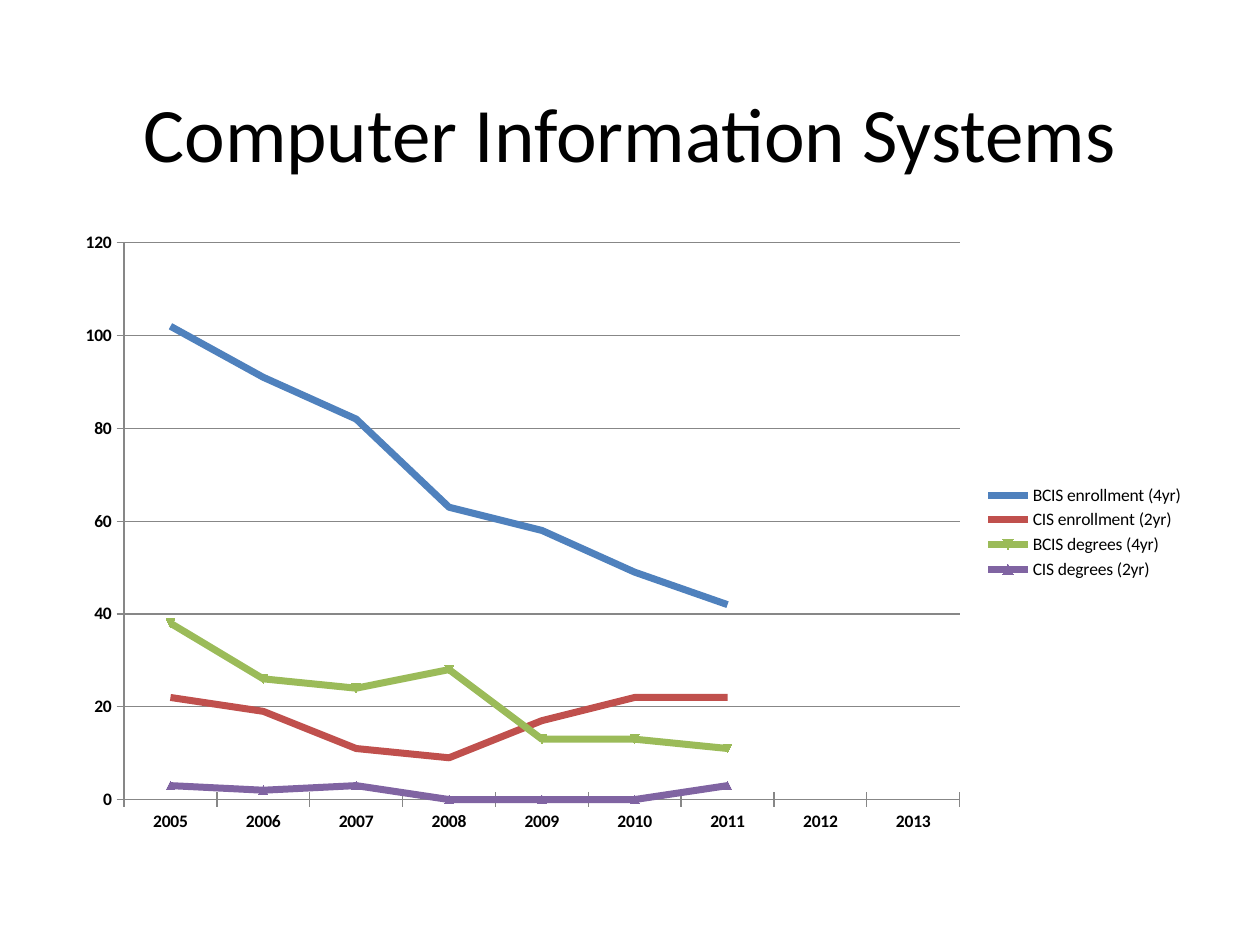
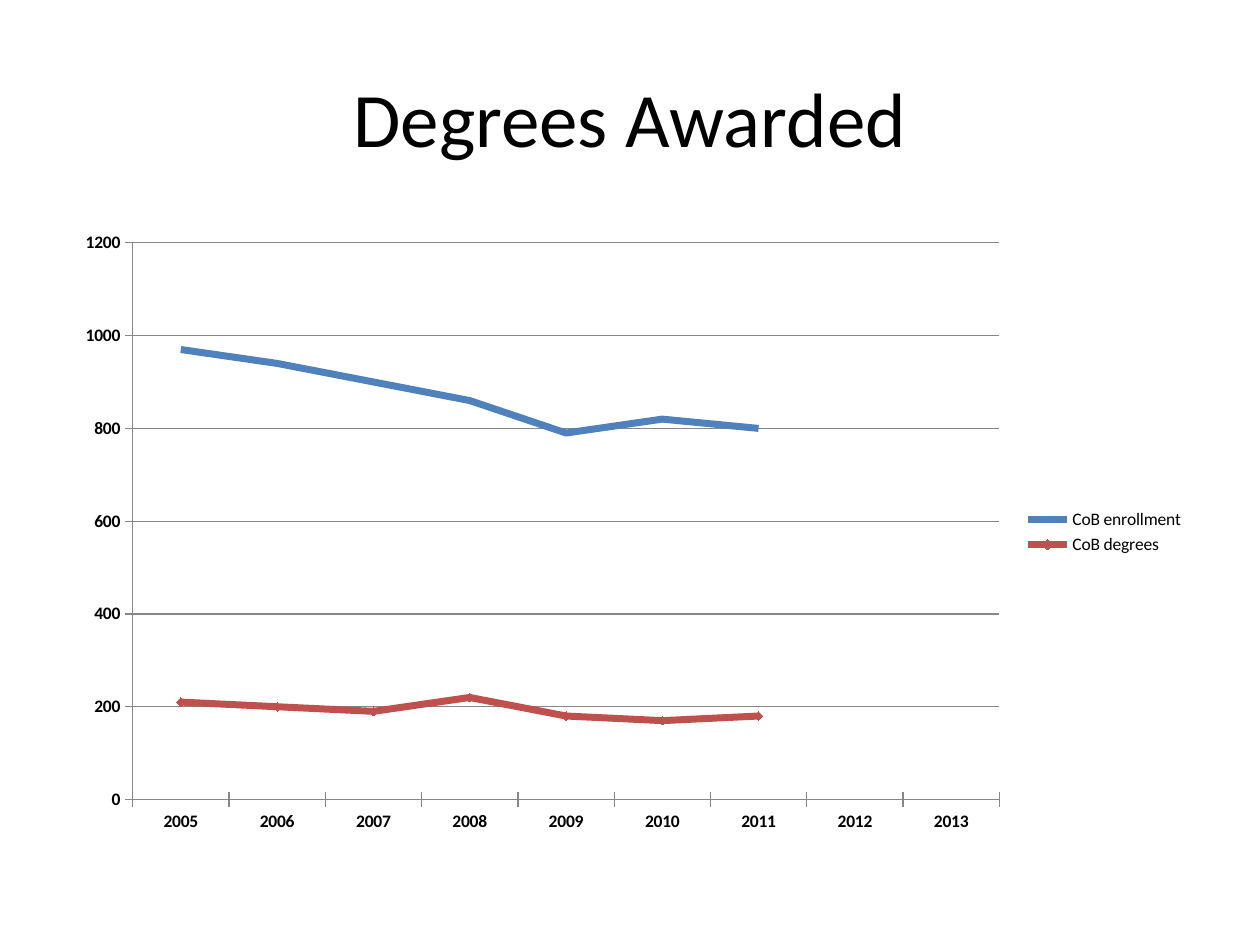
from dataclasses import dataclass

from pptx import Presentation
from pptx.chart.data import CategoryChartData
from pptx.dml.color import RGBColor
from pptx.enum.chart import XL_CHART_TYPE, XL_LEGEND_POSITION, XL_MARKER_STYLE, XL_TICK_MARK
from pptx.enum.text import MSO_ANCHOR, PP_ALIGN
from pptx.util import Pt

LINE_CHART = XL_CHART_TYPE.LINE_MARKERS
LEGEND_RIGHT = XL_LEGEND_POSITION.RIGHT
NO_MARKER = XL_MARKER_STYLE.NONE
AUTO_MARKER = XL_MARKER_STYLE.AUTOMATIC
TICK_CROSS = XL_TICK_MARK.CROSS
TICK_NONE = XL_TICK_MARK.NONE
MIDDLE = MSO_ANCHOR.MIDDLE
CENTER = PP_ALIGN.CENTER


@dataclass(frozen=True)
class Theme:
    font: str = "Calibri"
    text: RGBColor = RGBColor(0, 0, 0)
    grid: RGBColor = RGBColor.from_string("878787")
    series: tuple = tuple(
        RGBColor.from_string(code) for code in ("4F81BD", "C0504D", "9BBB59", "8064A2")
    )
    title_size: int = 44
    chart_size: int = 10
    series_width: float = 4
    grid_width: float = 0.75
    marker_size: int = 5


THEME = Theme()
MARGIN, CONTENT_WIDTH = 36, 648
TITLE_HEIGHT = 90
CHART_TOP, CHART_HEIGHT = 126, 356.4
YEARS = [str(year) for year in range(2005, 2014)]

SLIDES = [
    {
        "title": "Computer Information Systems",
        "title_top": 30.2,
        "top_value": 120,
        "enrollment": {
            "BCIS enrollment (4yr)": (102, 91, 82, 63, 58, 49, 42),
            "CIS enrollment (2yr)": (22, 19, 11, 9, 17, 22, 22),
        },
        "degrees": {
            "BCIS degrees (4yr)": (38, 26, 24, 28, 13, 13, 11),
            "CIS degrees (2yr)": (3, 2, 3, 0, 0, 0, 3),
        },
    },
    {
        "title": "Degrees Awarded",
        "title_top": 21.6,
        "top_value": 1200,
        "enrollment": {"CoB enrollment": (970, 940, 900, 860, 790, 820, 800)},
        "degrees": {"CoB degrees": (210, 200, 190, 220, 180, 170, 180)},
    },
]


def apply_format(target, values):
    for name, value in values.items():
        setattr(target, name, value)


def format_font(font, size, bold=False):
    apply_format(font, {"name": THEME.font, "size": Pt(size), "bold": bold})
    font.color.rgb = THEME.text


def format_line(line, color, width):
    line.color.rgb = color
    line.width = Pt(width)


def set_title(page, text, top):
    box = page.shapes.title
    apply_format(box, {
        "left": Pt(MARGIN), "top": Pt(top),
        "width": Pt(CONTENT_WIDTH), "height": Pt(TITLE_HEIGHT),
    })
    box.text_frame.vertical_anchor = MIDDLE
    para = box.text_frame.paragraphs[0]
    para.alignment = CENTER
    span = para.add_run()
    span.text = text
    format_font(span.font, THEME.title_size)


def format_axis(axis):
    apply_format(axis, {"major_tick_mark": TICK_CROSS, "minor_tick_mark": TICK_NONE})
    format_font(axis.tick_labels.font, THEME.chart_size, bold=True)
    format_line(axis.format.line, THEME.grid, THEME.grid_width)


def format_series(series, color, marked):
    series.smooth = False
    format_line(series.format.line, color, THEME.series_width)
    series.marker.style = AUTO_MARKER if marked else NO_MARKER
    if marked:
        series.marker.size = THEME.marker_size
        series.marker.format.fill.solid()
        series.marker.format.fill.fore_color.rgb = color
        format_line(series.marker.format.line, color, THEME.grid_width)


def add_trend_chart(page, enrollment, degrees, top_value):
    data = CategoryChartData()
    data.categories = YEARS
    for name, values in (enrollment | degrees).items():
        missing = len(YEARS) - len(values)
        data.add_series(name, (*values, *[None] * missing))
    chart = page.shapes.add_chart(
        LINE_CHART, Pt(MARGIN), Pt(CHART_TOP), Pt(CONTENT_WIDTH), Pt(CHART_HEIGHT), data
    ).chart
    format_font(chart.font, THEME.chart_size)
    apply_format(chart, {"has_title": False, "has_legend": True})
    apply_format(chart.legend, {"position": LEGEND_RIGHT, "include_in_layout": False})
    format_font(chart.legend.font, THEME.chart_size)

    for axis in (chart.category_axis, chart.value_axis):
        format_axis(axis)
    apply_format(chart.value_axis, {
        "minimum_scale": 0, "maximum_scale": top_value,
        "major_unit": top_value / 6, "has_major_gridlines": True,
    })
    format_line(chart.value_axis.major_gridlines.format.line, THEME.grid, THEME.grid_width)

    chart.plots[0].vary_by_categories = False
    for series, color in zip(chart.plots[0].series, THEME.series):
        format_series(series, color, marked=series.name in degrees)


def main():
    deck = Presentation()
    apply_format(deck, {"slide_width": Pt(720), "slide_height": Pt(540)})
    title_only = deck.slide_layouts.get_by_name("Title Only")
    for content in SLIDES:
        page = deck.slides.add_slide(title_only)
        set_title(page, content["title"], content["title_top"])
        add_trend_chart(page, content["enrollment"], content["degrees"], content["top_value"])
    deck.save("out.pptx")


if __name__ == "__main__":
    main()
